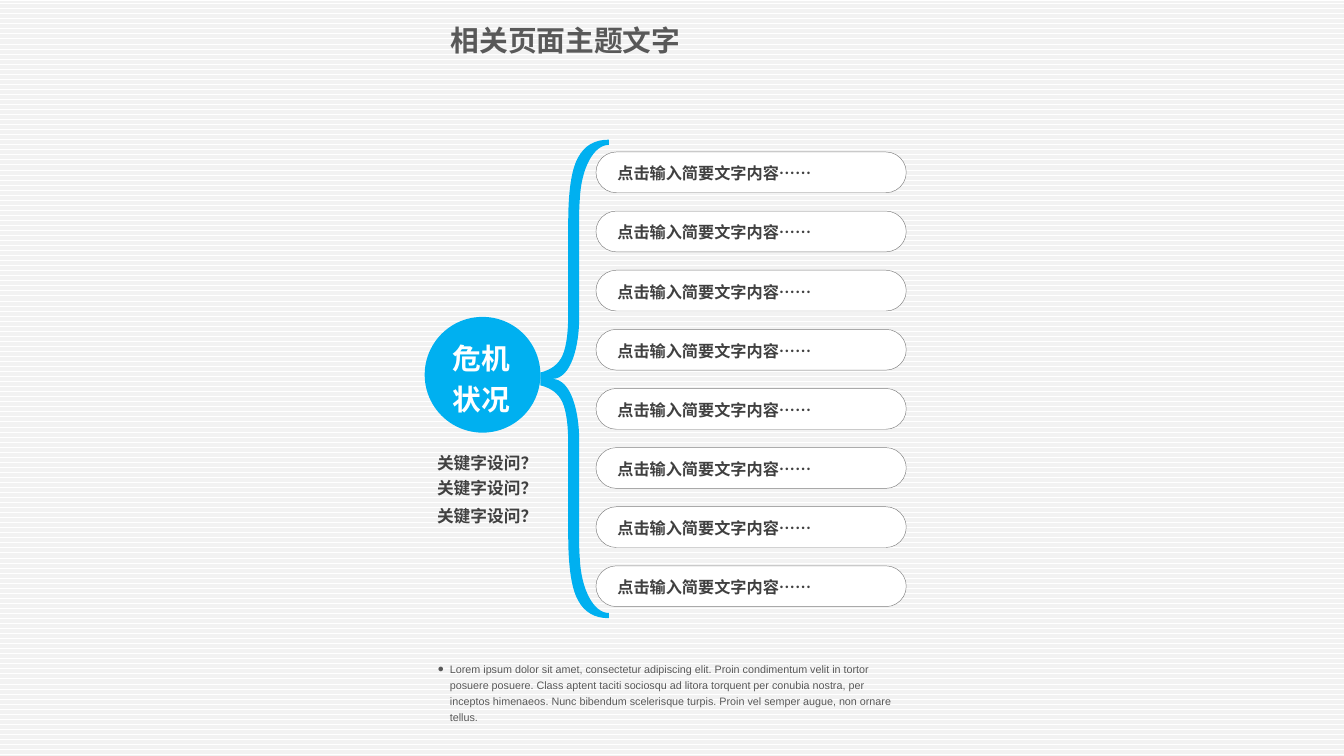
from dataclasses import dataclass
from typing import Optional

from lxml import etree
from pptx import Presentation
from pptx.dml.color import RGBColor
from pptx.enum.dml import MSO_PATTERN
from pptx.enum.shapes import MSO_SHAPE as Shape
from pptx.enum.text import MSO_ANCHOR as Anchor, MSO_AUTO_SIZE as AutoSize, PP_ALIGN as Align
from pptx.oxml.ns import qn
from pptx.util import Pt

WHITE = RGBColor(0xFF, 0xFF, 0xFF)
STRIPE = RGBColor(0xF2, 0xF2, 0xF2)
BLUE = RGBColor(0x00, 0xB0, 0xF0)
GREY = RGBColor(0x59, 0x59, 0x59)
DARK = RGBColor(0x40, 0x40, 0x40)
OUTLINE = RGBColor(0x80, 0x80, 0x80)
CJK = "Noto Sans CJK SC"

TITLE = "相关页面主题文字"
HUB = "危机\n状况"
QUESTION = "关键字设问？"
ITEM = "点击输入简要文字内容……"
BODY = (
    "Lorem ipsum dolor sit amet, consectetur adipiscing elit. Proin condimentum velit in "
    "tortor posuere posuere. Class aptent taciti sociosqu ad litora torquent per conubia "
    "nostra, per inceptos himenaeos. Nunc bibendum scelerisque turpis. Proin vel semper "
    "augue, non ornare tellus."
)

QUESTION_TOPS = (504, 532.4, 563)
ITEM_COUNT = 8
ITEM_TOP = 169.2
ITEM_PITCH = 65.83
BRACE_MIDDLE = 421.9
STRIPES_ID = "20"

Point = tuple[float, float]
Curve = tuple[Point, Point, Point, Point]


@dataclass(frozen=True)
class Box:
    left: float
    top: float
    width: float
    height: float

    def lengths(self) -> tuple[Pt, Pt, Pt, Pt]:
        return Pt(self.left), Pt(self.top), Pt(self.width), Pt(self.height)


@dataclass(frozen=True)
class TextStyle:
    size: float
    color: RGBColor
    align: Align
    spacing: Optional[float] = None
    font: str = CJK
    bold: bool = True
    inset_x: float = 0
    inset_y: float = 0


TITLE_STYLE = TextStyle(32, GREY, Align.LEFT, 38.4, inset_x=7.2, inset_y=3.6)
HUB_STYLE = TextStyle(32, WHITE, Align.CENTER, 45)
QUESTION_STYLE = TextStyle(18.6, DARK, Align.CENTER)
ITEM_STYLE = TextStyle(18, DARK, Align.JUSTIFY, 24)
BODY_STYLE = TextStyle(12, GREY, Align.LEFT, 18, font="Arial", bold=False)

# Upper half of the brace, each edge running from its tip to the middle
OUTER_EDGE: list[Curve] = [
    ((678.2, 155.5), (662.4, 155.5), (650.9, 162), (643.7, 175.7)),
    ((643.7, 175.7), (636.5, 188.6), (632.9, 213.1), (632.9, 247.7)),
    ((632.9, 348.5), (632.9, 370.8), (630.7, 386.6), (626.4, 396)),
    ((626.4, 396), (622.1, 405.4), (614.2, 411.8), (601.9, 414.7)),
]
INNER_EDGE: list[Curve] = [
    ((678.2, 161.3), (661, 161.3), (647.3, 187.9), (645.8, 221.8)),
    ((645.8, 221.8), (645.4, 227), (645.1, 232), (645.1, 237.6)),
    ((645.1, 353.5), (645.1, 384.5), (636.5, 421.9), (614.9, 421.9)),
]


def write(shape, text: str, style: TextStyle) -> None:
    tf = shape.text_frame
    tf.text = text
    tf.word_wrap = True
    tf.auto_size = AutoSize.SHAPE_TO_FIT_TEXT
    tf.vertical_anchor = Anchor.TOP
    tf.margin_left = tf.margin_right = Pt(style.inset_x)
    tf.margin_top = tf.margin_bottom = Pt(style.inset_y)
    for p in tf.paragraphs:
        p.alignment = style.align
        if style.spacing:
            p.line_spacing = Pt(style.spacing)
        for r in p.runs:
            r.font.size = Pt(style.size)
            r.font.bold = style.bold
            r.font.color.rgb = style.color
            r.font.name = style.font
            etree.SubElement(r.font._element, qn("a:ea")).set("typeface", style.font)


def add_text(shapes, box: Box, text: str, style: TextStyle) -> None:
    write(shapes.add_textbox(*box.lengths()), text, style)


def fill_placeholder(placeholder, box: Box, text: str, style: TextStyle) -> None:
    placeholder.left, placeholder.top, placeholder.width, placeholder.height = box.lengths()
    write(placeholder, text, style)


def paint(shape, fill: RGBColor, line: Optional[RGBColor] = None) -> None:
    shape.shadow.inherit = False
    shape.fill.solid()
    shape.fill.fore_color.rgb = fill
    if line is None:
        shape.line.fill.background()
    else:
        shape.line.color.rgb = line
        shape.line.width = Pt(0.5)


def add_bullet(p, char: str, indent: float) -> None:
    pPr = p._p.get_or_add_pPr()
    pPr.set("marL", str(Pt(indent)))
    pPr.set("indent", str(-Pt(indent)))
    etree.SubElement(pPr, qn("a:buFont")).set("typeface", "Arial")
    etree.SubElement(pPr, qn("a:buChar")).set("char", char)


def add_stripes(prs, s) -> None:
    """Draw the striped backdrop and move it to the back of the slide master."""
    stripes = s.shapes.add_shape(Shape.RECTANGLE, *Box(-2.9, 0, 1499.8, 853.9).lengths())
    paint(stripes, STRIPE)
    stripes.fill.patterned()
    stripes.fill.pattern = MSO_PATTERN.NARROW_HORIZONTAL
    stripes.fill.fore_color.rgb = STRIPE
    stripes.fill.back_color.rgb = WHITE
    stripes._element.nvSpPr.cNvPr.set("id", STRIPES_ID)
    prs.slide_master.shapes._spTree.insert(2, stripes._element)


def add_hub(s) -> None:
    shapes = s.shapes.add_group_shape().shapes
    paint(shapes.add_shape(Shape.OVAL, *Box(473, 352.8, 128.9, 128.9).lengths()), BLUE)
    add_text(shapes, Box(487.4, 373.2, 97.9, 90.7), HUB, HUB_STYLE)


def mirrored(edge: list[Curve]) -> list[Curve]:
    return [tuple((x, 2 * BRACE_MIDDLE - y) for x, y in curve) for curve in edge]


def backwards(edge: list[Curve]) -> list[Curve]:
    return [curve[::-1] for curve in reversed(edge)]


def add_curved_shape(s, curves: list[Curve]):
    """Join the curves with straight lines into one closed freeform."""
    points, curve_starts = [curves[0][0]], []
    for start, *others in curves:
        if points[-1] != start:
            points.append(start)
        curve_starts.append(len(points) - 1)
        points += others
    first, *rest = [(Pt(x), Pt(y)) for x, y in points]
    builder = s.shapes.build_freeform(*first)
    builder.add_line_segments(rest, close=True)
    shape = builder.convert_to_shape()
    lines = list(shape._element.iter(qn("a:lnTo")))
    for k in curve_starts:
        cubic = etree.Element(qn("a:cubicBezTo"))
        lines[k].addprevious(cubic)
        for line in lines[k:k + 3]:
            cubic.append(line[0])
            line.getparent().remove(line)
    return shape


def add_item(s, top: float) -> None:
    shapes = s.shapes.add_group_shape().shapes
    pill = shapes.add_shape(Shape.ROUNDED_RECTANGLE, *Box(663.8, top, 345.6, 45.4).lengths())
    pill.adjustments[0] = 0.5
    paint(pill, WHITE, OUTLINE)
    add_text(shapes, Box(687.6, top + 10.6, 292.3, 24.5), ITEM, ITEM_STYLE)


def main() -> None:
    prs = Presentation()
    prs.slide_width, prs.slide_height = Pt(1496.9), Pt(841.7)
    s = prs.slides.add_slide(prs.slide_layouts[1])
    add_stripes(prs, s)
    fill_placeholder(s.shapes.title, Box(494.6, 21.6, 338.4, 46.1), TITLE, TITLE_STYLE)
    body = s.placeholders[1]
    fill_placeholder(body, Box(487.4, 734, 522, 54.7), BODY, BODY_STYLE)
    p = body.text_frame.paragraphs[0]
    p.space_before = Pt(9.2)
    add_bullet(p, "●", 13.7)
    add_hub(s)
    for top in QUESTION_TOPS:
        add_text(s.shapes, Box(459.4, top, 166.3, 22.3), QUESTION, QUESTION_STYLE)
    brace = OUTER_EDGE + backwards(mirrored(OUTER_EDGE))
    brace += mirrored(INNER_EDGE) + backwards(INNER_EDGE)
    paint(add_curved_shape(s, brace), BLUE)
    for i in range(ITEM_COUNT):
        add_item(s, ITEM_TOP + i * ITEM_PITCH)
    prs.save("out.pptx")


if __name__ == "__main__":
    main()
